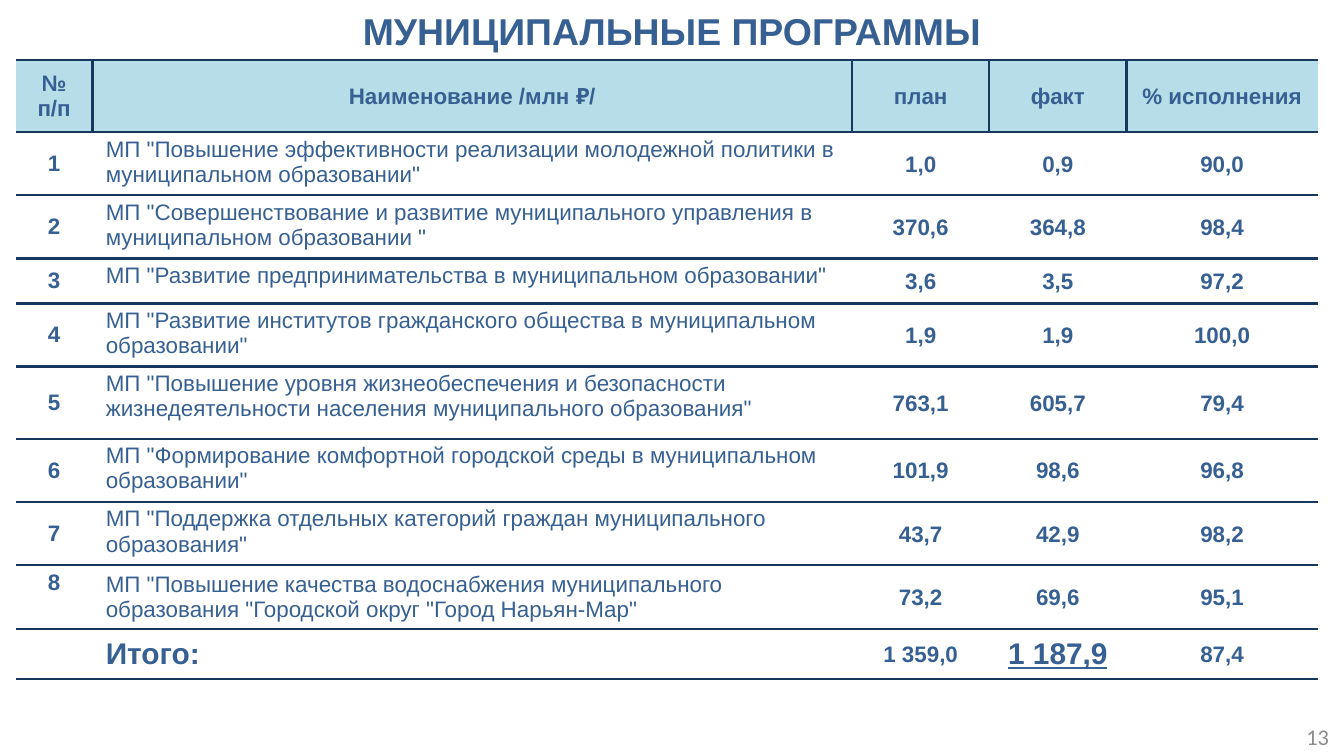
from dataclasses import dataclass

from lxml.etree import SubElement
from pptx import Presentation
from pptx.dml.color import RGBColor
from pptx.enum.text import MSO_ANCHOR, PP_ALIGN
from pptx.oxml.ns import qn
from pptx.util import Pt


@dataclass(frozen=True)
class Theme:
    text: str = "376092"
    rule: str = "17375E"
    header: str = "B7DEE8"
    muted: str = "8C8C8C"
    title_size: int = 20
    total_size: int = 16
    body_size: int = 12
    font: str = "Arial"
    number_font: str = "Calibri"


theme = Theme()


def write(tf, text, size=theme.body_size, color=theme.text, font=theme.font,
          bold=True, underline=False, align=PP_ALIGN.CENTER):
    tf.word_wrap = True
    p = tf.paragraphs[0]
    p.alignment = align
    r = p.add_run()
    r.text = text
    r.font.size = Pt(size)
    r.font.name = font
    r.font.bold = bold
    r.font.underline = underline
    r.font.color.rgb = RGBColor.from_string(color)


def set_borders(cell, ruled_sides):
    tcPr = cell._tc.get_or_add_tcPr()
    for side in "LRTB":
        ln = SubElement(tcPr, qn(f"a:ln{side}"), w=str(Pt(1.5)))
        if side in ruled_sides:
            fill = SubElement(ln, qn("a:solidFill"))
            SubElement(fill, qn("a:srgbClr"), val=theme.rule)
        else:
            SubElement(ln, qn("a:noFill"))


prs = Presentation()
prs.slide_width, prs.slide_height = Pt(720), Pt(405)
s = prs.slides.add_slide(prs.slide_layouts[6])

# Title and page number
for text, box, style in [
    ("МУНИЦИПАЛЬНЫЕ ПРОГРАММЫ", (0, 4.5, 720, 24), dict(size=theme.title_size)),
    ("13", (551, 384, 168, 21.5),
     dict(color=theme.muted, font=theme.number_font, bold=False, align=PP_ALIGN.RIGHT)),
]:
    tf = s.shapes.add_textbox(*map(Pt, box)).text_frame
    tf.vertical_anchor = MSO_ANCHOR.MIDDLE
    tf.margin_top = tf.margin_bottom = 0
    write(tf, text, **style)

# Programme data
rows = [
    ("№ п/п", "Наименование /млн ₽/", "план", "факт", "% исполнения"),
    ("1", 'МП "Повышение эффективности реализации молодежной политики в муниципальном образовании"',
     "1,0", "0,9", "90,0"),
    ("2", 'МП "Совершенствование и развитие муниципального управления в муниципальном образовании "',
     "370,6", "364,8", "98,4"),
    ("3", 'МП "Развитие предпринимательства в муниципальном образовании"', "3,6", "3,5", "97,2"),
    ("4", 'МП "Развитие институтов гражданского общества в муниципальном образовании"',
     "1,9", "1,9", "100,0"),
    ("5", 'МП "Повышение уровня жизнеобеспечения и безопасности жизнедеятельности населения '
          'муниципального образования"', "763,1", "605,7", "79,4"),
    ("6", 'МП "Формирование комфортной городской среды в муниципальном образовании"',
     "101,9", "98,6", "96,8"),
    ("7", 'МП "Поддержка отдельных категорий граждан муниципального образования"',
     "43,7", "42,9", "98,2"),
    ("8", 'МП "Повышение качества водоснабжения муниципального образования '
          '"Городской округ "Город Нарьян-Мар"', "73,2", "69,6", "95,1"),
    ("", "Итого:", "1 359,0", "1 187,9", "87,4"),
]
widths = [41, 407, 73.5, 73.5, 102.5]
heights = [38.5, 32.3, 32.3, 24.2, 32.3, 38.7, 32.3, 32.3, 34.3, 26.2]
last_row, last_col = len(rows) - 1, len(widths) - 1

# Table
table = s.shapes.add_table(len(rows), len(widths), Pt(8.5), Pt(32.3),
                           Pt(sum(widths)), Pt(sum(heights))).table
table.first_row = table.horz_banding = False
for column, width in zip(table.columns, widths):
    column.width = Pt(width)
for row, height in zip(table.rows, heights):
    row.height = Pt(height)

for i, values in enumerate(rows):
    for j, value in enumerate(values):
        cell = table.cell(i, j)
        header, total, name = i == 0, i == last_row, j == 1
        figure = j > 1 and not header

        cell.margin_left = cell.margin_right = Pt(0.7 if figure else 7.2)
        cell.margin_top = Pt(0.7 if figure else 2.5)
        cell.margin_bottom = Pt(0 if figure else 2.5)
        # Names sit at the top except in the last programme, where the number does
        at_top = (name and 0 < i < last_row - 1) or (j == 0 and i == last_row - 1)
        cell.vertical_anchor = MSO_ANCHOR.TOP if at_top else MSO_ANCHOR.MIDDLE

        sides = "TB"
        if header:
            sides += ("L" if j > 0 else "") + ("R" if j < last_col else "")
        set_borders(cell, sides)
        if header:
            cell.fill.solid()
            cell.fill.fore_color.rgb = RGBColor.from_string(theme.header)
        else:
            cell.fill.background()

        write(cell.text_frame, value,
              size=theme.total_size if total and j in (1, 3) else theme.body_size,
              bold=header or total or not name,
              underline=total and j == 3,
              align=PP_ALIGN.LEFT if name and not header else PP_ALIGN.CENTER)

prs.save("out.pptx")
